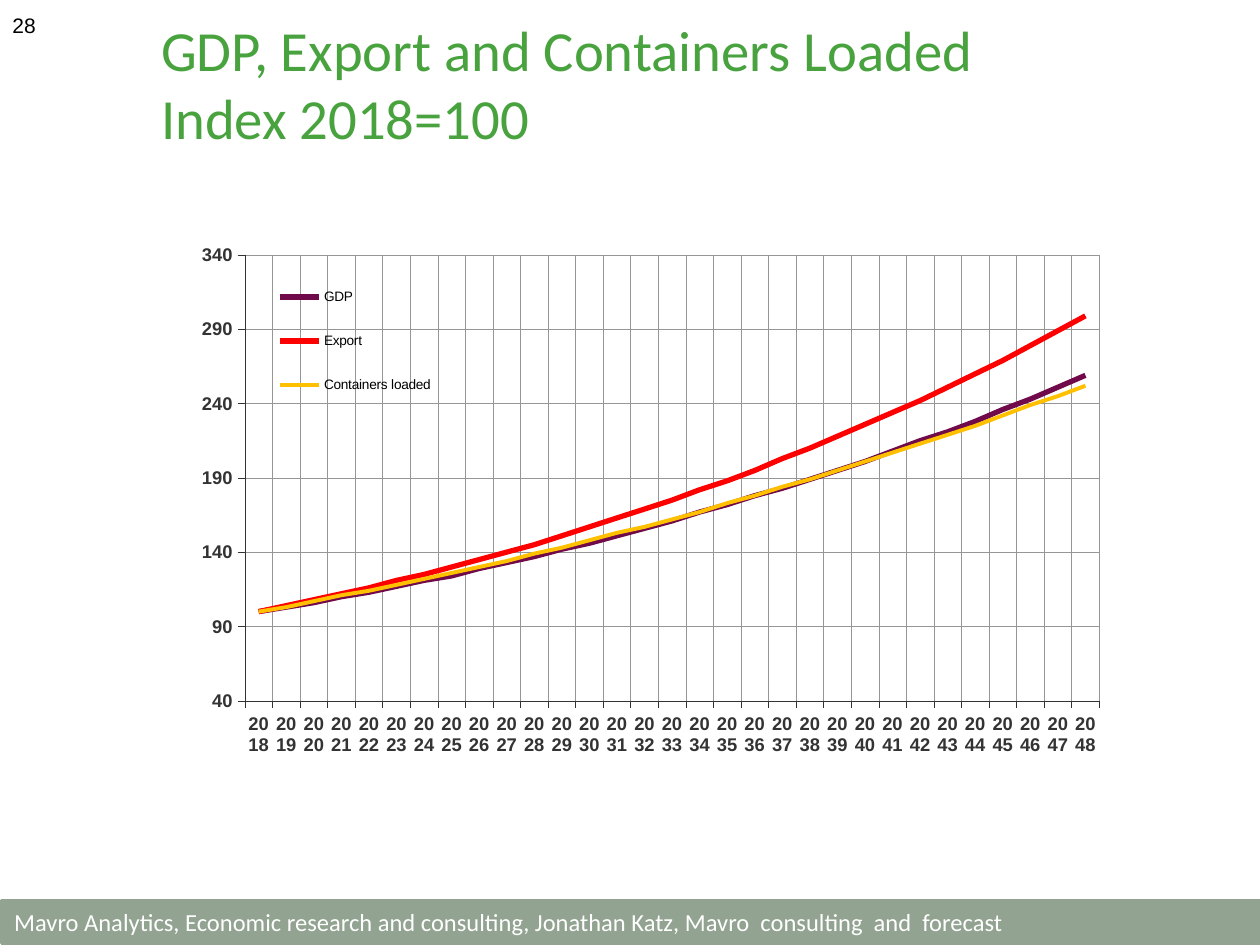
from lxml.etree import SubElement
from pptx import Presentation
from pptx.chart.data import CategoryChartData
from pptx.dml.color import RGBColor
from pptx.enum.chart import XL_CHART_TYPE, XL_LEGEND_POSITION, XL_MARKER_STYLE, XL_TICK_MARK
from pptx.enum.shapes import MSO_SHAPE
from pptx.enum.text import MSO_ANCHOR, PP_ALIGN
from pptx.oxml.ns import qn
from pptx.util import Pt

TITLE = "GDP, Export and Containers Loaded\nIndex 2018=100"
FOOTER = "Mavro Analytics, Economic research and consulting, Jonathan Katz, Mavro  consulting  and  forecast"
NUMBER = "28"
YEARS = [str(year) for year in range(2018, 2049)]
SERIES = [
    ("GDP", "710A4A", 3,
     [100, 103, 106, 110, 113, 117, 121, 124, 129, 133, 137, 142, 146, 151, 156, 161,
      167, 172, 178, 183, 189, 195, 201, 208, 215, 221, 228, 236, 243, 251, 259]),
    ("Export", "FF0000", 3,
     [100, 104, 108, 112, 116, 121, 125, 130, 135, 140, 145, 151, 157, 163, 169, 175,
      182, 188, 195, 203, 210, 218, 226, 234, 242, 251, 260, 269, 279, 289, 299]),
    ("Containers loaded", "FFC000", 2.25,
     [100, 103, 107, 111, 114, 118, 122, 126, 130, 134, 139, 143, 148, 153, 157, 162,
      167, 173, 178, 184, 189, 195, 201, 207, 213, 219, 225, 232, 239, 245, 252]),
]


def tint(code):
    return RGBColor.from_string(code)


def style(font, size, color, name="Calibri", bold=False):
    font.size = Pt(size)
    font.name = name
    font.bold = bold
    font.color.rgb = tint(color)


def write(shape, text, align=PP_ALIGN.LEFT, **form):
    frame = shape.text_frame
    frame.word_wrap = True
    frame.vertical_anchor = MSO_ANCHOR.MIDDLE
    para = frame.paragraphs[0]
    para.alignment = align
    for i, line in enumerate(text.split("\n")):
        if i:
            para.add_line_break()
        run = para.add_run()
        run.text = line
        style(run.font, **form)


def stroke(line, color, width):
    line.color.rgb = tint(color)
    line.width = Pt(width)


def dress(axis):
    style(axis.tick_labels.font, 10.5, "333333", "Arial", True)
    stroke(axis.format.line, "333333", 0.25)
    axis.has_major_gridlines = True
    stroke(axis.major_gridlines.format.line, "969696", 0.25)
    axis.major_tick_mark = XL_TICK_MARK.OUTSIDE
    axis.minor_tick_mark = XL_TICK_MARK.NONE


def level(axis):
    node = axis._element
    body = node.find(qn("c:txPr")).find(qn("a:bodyPr"))
    body.set("rot", "0")
    body.set("vert", "horz")
    skip = SubElement(node, qn("c:tickLblSkip"))
    skip.set("val", "1")
    node.find(qn("c:noMultiLvlLbl")).addprevious(skip)


def layout(node, spot, box, inner=False):
    for old in node.findall(qn("c:layout")):
        node.remove(old)
    outer = SubElement(node, qn("c:layout"))
    node.insert(spot, outer)
    manual = SubElement(outer, qn("c:manualLayout"))
    items = [("layoutTarget", "inner")] if inner else []
    items += [("xMode", "edge"), ("yMode", "edge"), *zip("xywh", box)]
    for tag, val in items:
        SubElement(manual, qn("c:" + tag)).set("val", str(val))


def plot(slide):
    data = CategoryChartData(number_format="0")
    data.categories = YEARS
    for name, _, _, vals in SERIES:
        data.add_series(name, vals)
    chart = slide.shapes.add_chart(
        XL_CHART_TYPE.LINE, Pt(103.25), Pt(127.3), Pt(525), Pt(307), data).chart
    chart.has_title = False
    style(chart.font, 10, "000000", "Arial")
    chart.plots[0].vary_by_categories = False
    for line, (_, color, width, _) in zip(chart.series, SERIES):
        line.smooth = False
        line.marker.style = XL_MARKER_STYLE.NONE
        stroke(line.format.line, color, width)
    dress(chart.category_axis)
    level(chart.category_axis)
    axis = chart.value_axis
    dress(axis)
    axis.minimum_scale, axis.maximum_scale, axis.major_unit = 40, 340, 50
    axis.tick_labels.number_format = "0"
    axis.tick_labels.number_format_is_linked = False
    chart.has_legend = True
    key = chart.legend
    key.position = XL_LEGEND_POSITION.RIGHT
    key.include_in_layout = True
    style(key.font, 7.8, "000000", "Arial")
    layout(key._element, 1, (0.09, 0.07, 0.2, 0.3))
    area = chart._chartSpace.chart.plotArea
    layout(area, 0, (0.07, 0.06, 0.93, 0.83), True)


def main():
    deck = Presentation()
    deck.slide_width, deck.slide_height = Pt(720), Pt(540)
    slide = deck.slides.add_slide(deck.slide_layouts[6])
    shapes = slide.shapes
    bar = shapes.add_shape(MSO_SHAPE.RECTANGLE, Pt(1), Pt(514.5), Pt(721), Pt(24.5))
    bar.shadow.inherit = False
    bar.fill.solid()
    bar.fill.fore_color.rgb = tint("92A391")
    stroke(bar.line, "92A391", 2)
    write(bar, FOOTER, size=14, color="FFFFFF")
    head = shapes.add_textbox(Pt(85), Pt(4), Pt(611), Pt(87))
    write(head, TITLE, size=32.4, color="48A23E")
    page = shapes.add_textbox(Pt(0), Pt(0), Pt(168), Pt(29))
    write(page, NUMBER, size=12, color="000000", name="Arial")
    plot(slide)
    deck.save("out.pptx")


if __name__ == "__main__":
    main()
